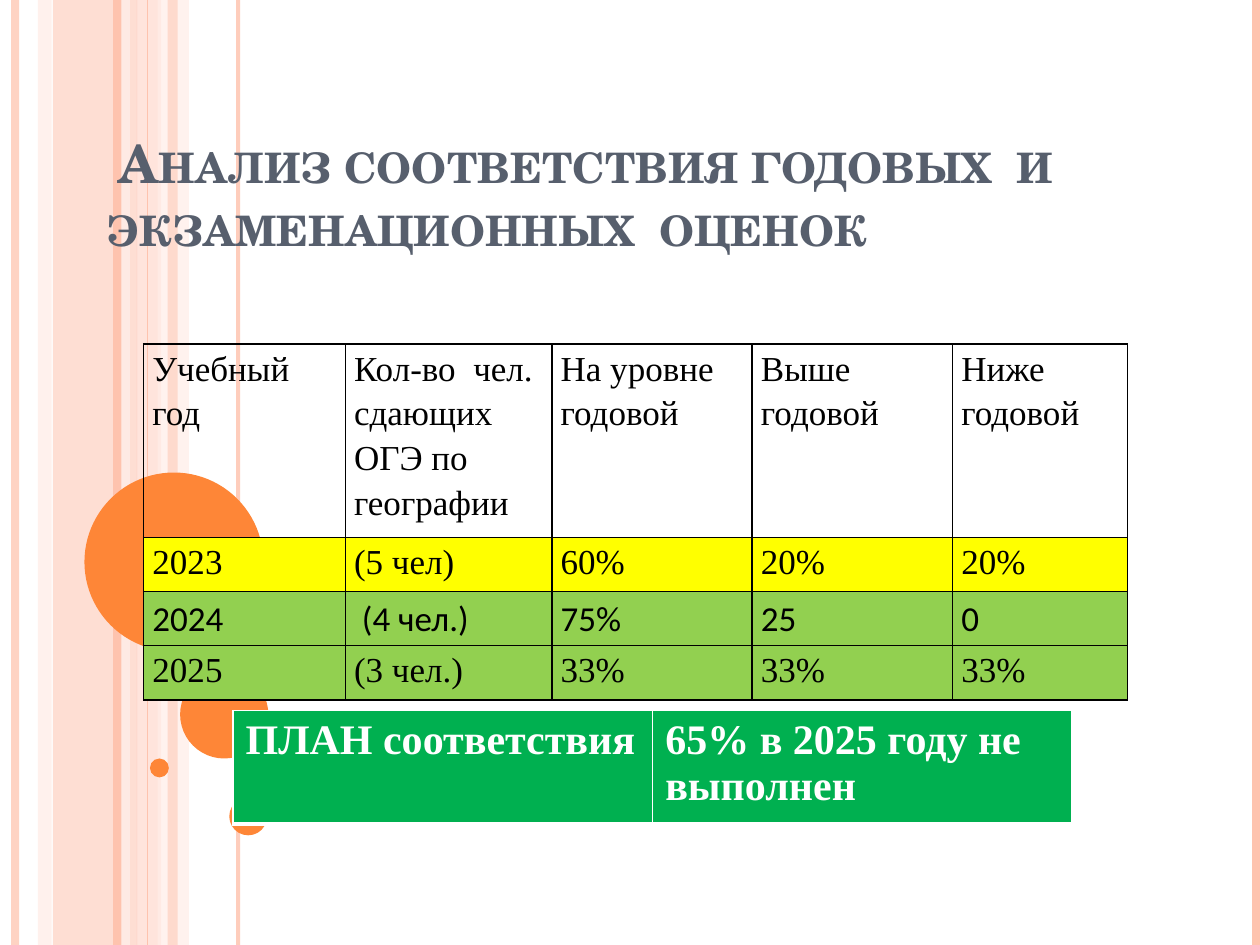
import pptx
import pptx.util
import pptx.dml.color
import pptx.enum.shapes
import pptx.enum.text
import pptx.oxml.ns
from dataclasses import dataclass
from lxml import etree

Inches = pptx.util.Inches
Pt = pptx.util.Pt
qn = pptx.oxml.ns.qn
SHAPE = pptx.enum.shapes.MSO_SHAPE
LINK = pptx.enum.shapes.MSO_CONNECTOR


@dataclass
class Theme:
    peach: str = "FEC3AE"
    blush: str = "FFD9CE"
    pale: str = "FFEDE8"
    orange: str = "FE8637"
    slate: str = "575F6D"
    black: str = "000000"
    white: str = "FFFFFF"
    yellow: str = "FFFF00"
    lime: str = "92D050"
    green: str = "00B050"
    head: str = "TeX Gyre Schola"
    serif: str = "Times New Roman"
    sans: str = "Calibri"
    big: int = 30
    mid: int = 24
    body: int = 20


def rgb(code):
    return pptx.dml.color.RGBColor.from_string(code)


class Deck:
    def __init__(self, theme, wide, high):
        self.theme = theme
        self.high = high
        self.show = pptx.Presentation()
        self.show.slide_width = Inches(wide)
        self.show.slide_height = Inches(high)
        self.slide = self.show.slides.add_slide(self.show.slide_layouts[6])

    def fade(self, item, alpha):
        if alpha < 100:
            color = item._element.spPr.find(".//" + qn("a:srgbClr"))
            etree.SubElement(color, qn("a:alpha"), val=str(alpha * 1000))

    def shape(self, kind, left, top, width, height, color, alpha=100):
        item = self.slide.shapes.add_shape(
            kind, Inches(left), Inches(top), Inches(width), Inches(height))
        item.shadow.inherit = False
        item.fill.solid()
        item.fill.fore_color.rgb = rgb(color)
        self.fade(item, alpha)
        item.line.fill.background()

    def band(self, left, width, color, alpha):
        self.shape(SHAPE.RECTANGLE, left, 0, width, self.high, color, alpha)

    def disc(self, left, top, size):
        self.shape(SHAPE.OVAL, left, top, size, size, self.theme.orange)

    def rule(self, x, color, width, alpha=100):
        item = self.slide.shapes.add_connector(
            LINK.STRAIGHT, Inches(x), 0, Inches(x), Inches(self.high))
        item.line.color.rgb = rgb(color)
        item.line.width = Pt(width)
        self.fade(item, alpha)
        etree.SubElement(item._element.spPr, qn("a:effectLst"))

    def font(self, para, face, size, color, bold=False):
        para.font.name = face
        para.font.size = Pt(size)
        para.font.bold = bold
        para.font.color.rgb = rgb(color)

    def title(self, text, left, top, width, height):
        box = self.slide.shapes.add_textbox(
            Inches(left), Inches(top), Inches(width), Inches(height))
        frame = box.text_frame
        frame.word_wrap = True
        frame.vertical_anchor = pptx.enum.text.MSO_ANCHOR.BOTTOM
        para = frame.paragraphs[0]
        para.text = text
        self.font(para, self.theme.head, self.theme.big, self.theme.slate, True)
        para._p.pPr.find(qn("a:defRPr")).set("cap", "small")

    def edges(self, cell, color, base):
        props = cell._tc.get_or_add_tcPr()
        for spot, side in enumerate("LRTB"):
            width = base if side == "B" else 1
            line = etree.Element(qn("a:ln" + side), w=str(Pt(width)))
            fill = etree.SubElement(line, qn("a:solidFill"))
            etree.SubElement(fill, qn("a:srgbClr"), val=color)
            props.insert(spot, line)

    def table(self, left, top, cols, highs, rows, size, color, edge,
              bold=False, base=1, tight=False):
        """Each row is (fill or None, font face, cell texts)."""
        grid = self.slide.shapes.add_table(
            len(rows), len(cols), Inches(left), Inches(top),
            Inches(sum(cols)), Inches(sum(highs))).table
        grid.first_row = grid.horz_banding = False
        for col, width in zip(grid.columns, cols):
            col.width = Inches(width)
        for row, high, (fill, face, texts) in zip(grid.rows, highs, rows):
            row.height = Inches(high)
            for cell, text in zip(row.cells, texts):
                if fill:
                    cell.fill.solid()
                    cell.fill.fore_color.rgb = rgb(fill)
                else:
                    cell.fill.background()
                self.edges(cell, edge, base)
                cell.text = text
                para = cell.text_frame.paragraphs[0]
                if tight:
                    cell.margin_left = cell.margin_right = Inches(0.07)
                    cell.margin_top = cell.margin_bottom = 0
                    para.line_spacing = 1.15
                self.font(para, face, size, color, bold)


def main():
    theme = Theme()
    deck = Deck(theme, 10, 7.5)

    # Striped backdrop
    for band in [(0.42, 0.67, theme.peach, 54), (0.3, 0.11, theme.blush, 36),
                 (1.08, 0.2, theme.blush, 70), (1.25, 0.25, theme.pale, 71)]:
        deck.band(*band)
    for rule in [(0.12, theme.peach, 4.5, 73), (1, theme.pale, 4.5, 83),
                 (0.93, theme.peach, 4.5), (1.89, theme.peach, 2.25, 82),
                 (1.17, theme.peach, 0.75), (9.97, theme.peach, 4.5)]:
        deck.rule(*rule)
    deck.band(1.33, 0.08, theme.peach, 51)

    # Orange discs
    for disc in [(0.67, 3.75, 1.42), (1.43, 5.32, 0.7), (1.19, 6.02, 0.15),
                 (1.82, 6.33, 0.3), (2.08, 4.92, 0.4)]:
        deck.disc(*disc)

    # Title
    deck.title(" Анализ соответствия годовых  и экзаменационных  оценок",
               0.75, 0.52, 8.5, 1.57)

    # Marks by year
    marks = [
        (None, theme.serif, ["Учебный год", "Кол-во  чел. сдающих ОГЭ по географии",
                             "На уровне годовой", "Выше  годовой", "Ниже годовой"]),
        (theme.yellow, theme.serif, ["2023", "(5 чел)", "60%", "20%", "20%"]),
        (theme.lime, theme.sans, ["2024", " (4 чел.)", "75%", "25", "0"]),
        (theme.lime, theme.serif, ["2025", "(3 чел.)", "33%", "33%", "33%"]),
    ]
    deck.table(1.14, 2.73, [1.6, 1.64, 1.59, 1.59, 1.39], [1.41] + [0.43] * 3,
               marks, theme.body, theme.black, theme.black, tight=True)

    # Plan result
    plan = [(theme.green, theme.serif,
             ["ПЛАН соответствия", "65% в 2025 году не выполнен"])]
    deck.table(1.85, 5.64, [3.33] * 2, [0.82], plan, theme.mid, theme.white,
               theme.white, bold=True, base=3)

    deck.show.save("out.pptx")


if __name__ == "__main__":
    main()
